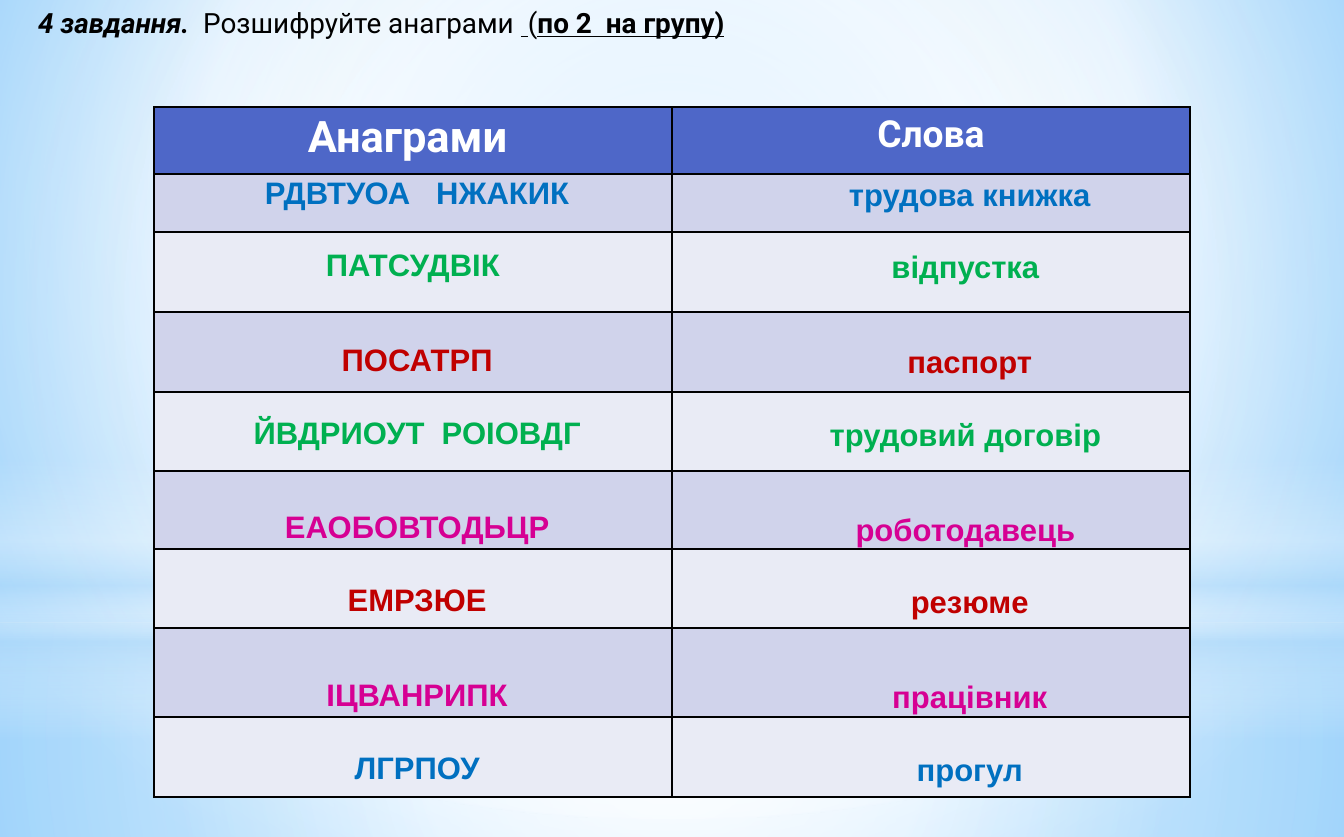
import pptx
import pptx.util
import pptx.dml.color
import pptx.enum.shapes
import pptx.enum.text
import pptx.oxml
import pptx.oxml.ns

RGB = pptx.dml.color.RGBColor
WHITE = RGB(0xFF, 0xFF, 0xFF)
BLACK = RGB(0, 0, 0)
SKY = RGB(0x9E, 0xD5, 0xFF)
AZURE = RGB(0x5B, 0xB9, 0xFF)
PALE = RGB(0xB4, 0xDC, 0xFA)
HEAD = RGB(0x4E, 0x67, 0xC8)
DARK = RGB(0xD0, 0xD3, 0xEB)
LIGHT = RGB(0xE9, 0xEB, 0xF5)
BLUE = RGB(0x00, 0x70, 0xC0)
GREEN = RGB(0x00, 0xB0, 0x50)
RED = RGB(0xC0, 0, 0)
PINK = RGB(0xD6, 0, 0x93)

SHAPE = pptx.enum.shapes.MSO_SHAPE
ALIGN = pptx.enum.text.PP_ALIGN
qn = pptx.oxml.ns.qn

TITLE = [
    ("4 завдання.  ", dict(bold=True, italic=True)),
    ("Розшифруйте анаграми ", {}),
    (" ", dict(bold=True, line=True)),
    ("(", {}),
    ("по 2  на групу)", dict(bold=True, line=True)),
]
PAIRS = [
    ("РДВТУОА   НЖАКИК", "трудова книжка", BLUE),
    ("ПАТСУДВІК ", "відпустка ", GREEN),
    ("ПОСАТРП", "паспорт", RED),
    ("ЙВДРИОУТ  РОІОВДГ", "трудовий договір ", GREEN),
    ("ЕАОБОВТОДЬЦР", "роботодавець ", PINK),
    ("ЕМРЗЮЕ", "резюме", RED),
    ("ІЦВАНРИПК", "працівник", PINK),
    ("ЛГРПОУ", "прогул", BLUE),
]
ROWS = [8, 6.93, 9.56, 9.56, 9.44, 9.32, 9.44, 10.63, 9.56]
CENTER = (50, 50, 50, 50)


def write(para, text, size=18, font="Roboto", color=BLACK, bold=False, italic=False, line=False):
    run = para.add_run()
    run.text = text
    face = run.font
    face.size = pptx.util.Pt(size)
    face.name = font
    face.color.rgb = color
    face.bold, face.italic, face.underline = bold, italic, line


def blend(node, stops, focus=None):
    marks = "".join(
        f'<a:gs pos="{pos * 1000}"><a:srgbClr val="{color}">'
        f'<a:alpha val="{alpha * 1000}"/></a:srgbClr></a:gs>'
        for pos, color, alpha in stops)
    if focus:
        sides = " ".join(f'{side}="{share * 1000}"' for side, share in zip("ltrb", focus))
        course = f'<a:path path="circle"><a:fillToRect {sides}/></a:path>'
    else:
        course = '<a:lin ang="5400000" scaled="0"/>'
    solid = node.find(".//" + qn("a:solidFill"))
    solid.getparent().replace(solid, pptx.oxml.parse_xml(
        f'<a:gradFill {pptx.oxml.ns.nsdecls("a")} rotWithShape="1">'
        f'<a:gsLst>{marks}</a:gsLst>{course}</a:gradFill>'))


class Page:
    def __init__(self, deck):
        self.wide, self.high = deck.slide_width, deck.slide_height
        self.slide = deck.slides.add_slide(deck.slide_layouts[3])
        self.shapes = self.slide.shapes

    def box(self, left, top, width, height):
        return [int(share * full / 100) for share, full in
                zip((left, top, width, height), (self.wide, self.high) * 2)]

    def behind(self, shape):
        self.shapes.title.element.addprevious(shape.element)

    def paper(self, stops, focus):
        self.slide.background.fill.solid()
        blend(self.slide.element, stops, focus)

    def glow(self, kind, area, stops, focus=None):
        shape = self.shapes.add_shape(kind, *self.box(*area))
        shape.shadow.inherit = False
        shape.line.fill.background()
        shape.fill.solid()
        blend(shape.element, stops, focus)
        self.behind(shape)

    def place(self, shape, area):
        shape.left, shape.top, shape.width, shape.height = self.box(*area)
        frame = shape.text_frame
        frame.word_wrap = True
        frame.auto_size = pptx.enum.text.MSO_AUTO_SIZE.NONE
        frame.vertical_anchor = pptx.enum.text.MSO_ANCHOR.TOP
        return frame

    def title(self, parts, area):
        para = self.place(self.shapes.title, area).paragraphs[0]
        para.alignment = ALIGN.LEFT
        for text, style in parts:
            write(para, text, **style)

    def words(self, slot, items, area):
        frame = self.place(self.slide.placeholders[slot], area)
        for num, (text, color) in enumerate(items):
            para = frame.add_paragraph() if num else frame.paragraphs[0]
            para.alignment = ALIGN.CENTER
            gap = (37.1, 22.9)[num % 2] if num else 0
            para.space_before = pptx.util.Pt(gap)
            props = para._p.get_or_add_pPr()
            props.set("marL", "0")
            props.set("indent", "0")
            props.append(pptx.oxml.parse_xml(f'<a:buNone {pptx.oxml.ns.nsdecls("a")}/>'))
            write(para, text, size=20, font="Arial", color=color, bold=True)

    def cell(self, cell, color):
        props = cell._tc.get_or_add_tcPr()
        for side in "LRTB":
            props.append(pptx.oxml.parse_xml(
                f'<a:ln{side} {pptx.oxml.ns.nsdecls("a")} w="12700"><a:solidFill>'
                f'<a:srgbClr val="{BLACK}"/></a:solidFill></a:ln{side}>'))
        cell.fill.solid()
        cell.fill.fore_color.rgb = color
        cell.margin_left = cell.margin_right = pptx.util.Inches(0.12)

    def table(self, heads, rows, area):
        frame = self.shapes.add_table(len(rows), len(heads), *self.box(*area))
        grid = frame.table
        for num, share in enumerate(rows):
            grid.rows[num].height = int(share * self.high / 100)
            for col in range(len(heads)):
                self.cell(grid.cell(num, col), (LIGHT, DARK)[num % 2] if num else HEAD)
        for col, (text, size) in enumerate(heads):
            para = grid.cell(0, col).text_frame.paragraphs[0]
            para.alignment = ALIGN.CENTER
            write(para, text, size=size, color=WHITE, bold=True)
        self.behind(frame)


def main():
    deck = pptx.Presentation()
    deck.slide_width = pptx.util.Inches(12.05)
    deck.slide_height = pptx.util.Inches(7.5)
    page = Page(deck)
    page.paper([(0, SKY, 100), (60, WHITE, 100), (100, AZURE, 100)], (20, 10, 20, 60))
    page.glow(SHAPE.RECTANGLE, (0, 74.4, 100, 25.6),
              [(0, WHITE, 91), (37, WHITE, 76), (100, PALE, 79)], CENTER)
    page.glow(SHAPE.RECTANGLE, (0, 0, 100, 74.4),
              [(0, WHITE, 89), (48, WHITE, 62), (100, PALE, 79)], CENTER)
    page.glow(SHAPE.RECTANGLE, (0, 54.93, 100, 33.33),
              [(0, WHITE, 0), (29, WHITE, 30), (45, PALE, 40),
               (55, WHITE, 26), (65, PALE, 60), (100, WHITE, 0)])
    page.glow(SHAPE.OVAL, (0, 23.33, 100, 74.4), [(0, WHITE, 100), (56, WHITE, 0)], CENTER)
    page.table([("Анаграми ", 28), ("Слова", 24)], ROWS, (11.45, 12.8, 77.1, 82.44))
    page.words(1, [(mixed, color) for mixed, _, color in PAIRS], (16.02, 20, 30.04, 73.6))
    page.words(2, [(word, color) for _, word, color in PAIRS], (60.33, 20.27, 23.65, 73.6))
    page.title(TITLE, (2, 0, 95.27, 9.47))
    deck.save("out.pptx")


if __name__ == "__main__":
    main()
